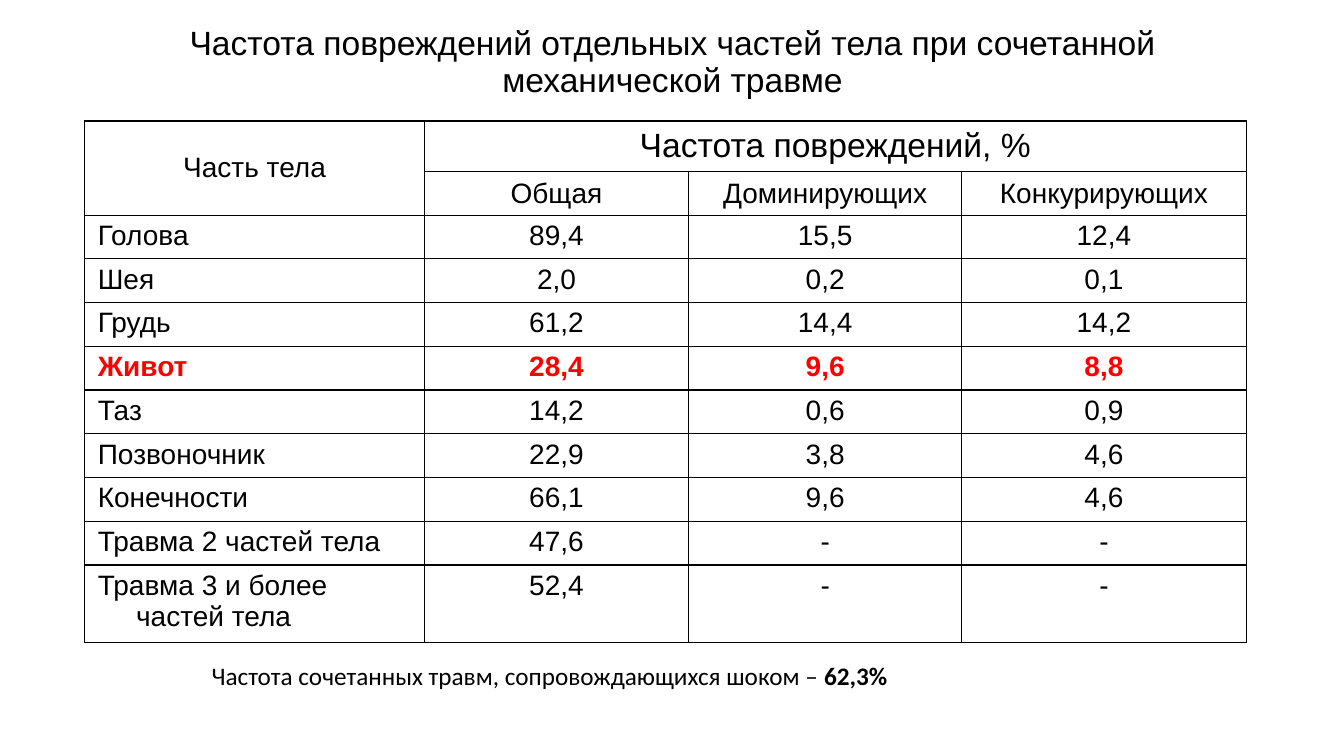
from lxml import etree
from pptx import Presentation
from pptx.dml.color import RGBColor
from pptx.enum.text import MSO_ANCHOR, PP_ALIGN
from pptx.oxml.ns import qn
from pptx.util import Inches, Pt

CENTER, LEFT = PP_ALIGN.CENTER, PP_ALIGN.LEFT
MIDDLE, TOP = MSO_ANCHOR.MIDDLE, MSO_ANCHOR.TOP

# Content
COLORS = {"text": "000000", "accent": "FF0000", "border": "000000"}
TITLE = "Частота повреждений отдельных частей тела при сочетанной механической травме"
ROWS = [
    ("Часть тела", "Частота повреждений, %", "", ""),
    ("", "Общая", "Доминирующих", "Конкурирующих"),
    ("Голова", "89,4", "15,5", "12,4"),
    ("Шея", "2,0", "0,2", "0,1"),
    ("Грудь", "61,2", "14,4", "14,2"),
    ("Живот", "28,4", "9,6", "8,8"),
    ("Таз", "14,2", "0,6", "0,9"),
    ("Позвоночник", "22,9", "3,8", "4,6"),
    ("Конечности", "66,1", "9,6", "4,6"),
    ("Травма 2 частей тела", "47,6", "-", "-"),
    ("Травма 3 и более частей тела", "52,4", "-", "-"),
]
HEADER_ROWS = 2
ACCENT_ROW = "Живот"
NOTE = [("Частота сочетанных травм, сопровождающихся шоком – ", False), ("62,3%", True)]

# Layout
COLUMN_WIDTHS = [3.37, 2.62, 2.71, 2.82]
ROW_HEIGHT, LAST_ROW_HEIGHT = 0.41, 0.72
HANGING = Inches(0.38)


def style(span, font, size, color="text", bold=False):
    span.font.name = font
    span.font.size = Pt(size)
    span.font.bold = bold
    span.font.color.rgb = RGBColor.from_string(COLORS[color])


def add_borders(cell):
    properties = cell._tc.get_or_add_tcPr()
    for position, side in enumerate(("lnL", "lnR", "lnT", "lnB")):
        line = etree.Element(qn(f"a:{side}"), w=str(Pt(1)))
        fill = etree.SubElement(line, qn("a:solidFill"))
        etree.SubElement(fill, qn("a:srgbClr"), val=COLORS["border"])
        properties.insert(position, line)


def fill_cell(cell, text, size, color, bold, align, anchor):
    cell.margin_left = cell.margin_right = Inches(0.13)
    cell.margin_top = cell.margin_bottom = Inches(0.05)
    cell.vertical_anchor = anchor
    cell.fill.background()
    add_borders(cell)
    cell.text_frame.text = text
    para = cell.text_frame.paragraphs[0]
    para.alignment = align
    indents = para._p.get_or_add_pPr()
    indents.set("marL", str(HANGING))
    indents.set("indent", str(-HANGING))
    style(para, "Arial", size, color, bold)
    for span in para.runs:
        style(span, "Arial", size, color, bold)


deck = Presentation()
deck.slide_width, deck.slide_height = Inches(13.33), Inches(7.5)
page = deck.slides.add_slide(deck.slide_layouts[6])

# Title
title = page.shapes.add_textbox(Inches(0.67), 0, Inches(12), Inches(1.25)).text_frame
title.word_wrap = True
title.vertical_anchor = MIDDLE
title.text = TITLE
title.paragraphs[0].alignment = CENTER
title.paragraphs[0].line_spacing = 0.9
style(title.paragraphs[0].runs[0], "Arial", 24)

# Table of injury frequencies
heights = [ROW_HEIGHT] * (len(ROWS) - 1) + [LAST_ROW_HEIGHT]
table = page.shapes.add_table(
    len(ROWS), len(COLUMN_WIDTHS), Inches(0.84), Inches(1.2),
    Inches(sum(COLUMN_WIDTHS)), Inches(sum(heights))).table
table.first_row = table.horz_banding = False
for column, width in zip(table.columns, COLUMN_WIDTHS):
    column.width = Inches(width)
for r, (values, height) in enumerate(zip(ROWS, heights)):
    table.rows[r].height = Inches(height)
    header = r < HEADER_ROWS
    accent = values[0] == ACCENT_ROW
    for c, value in enumerate(values):
        fill_cell(
            table.cell(r, c), value,
            size=24 if r == 0 and c == 1 else 20,
            color="accent" if accent else "text",
            bold=accent,
            align=CENTER if header or c else LEFT,
            anchor=MIDDLE if header else TOP)
table.cell(0, 0).merge(table.cell(1, 0))
table.cell(0, 1).merge(table.cell(0, 3))

# Note on shock
note = page.shapes.add_textbox(Inches(2), Inches(6.5), Inches(6.98), Inches(0.4)).text_frame
note.word_wrap = False
for text, bold in NOTE:
    span = note.paragraphs[0].add_run()
    span.text = text
    style(span, "Calibri", 18, bold=bold)

deck.save("out.pptx")
